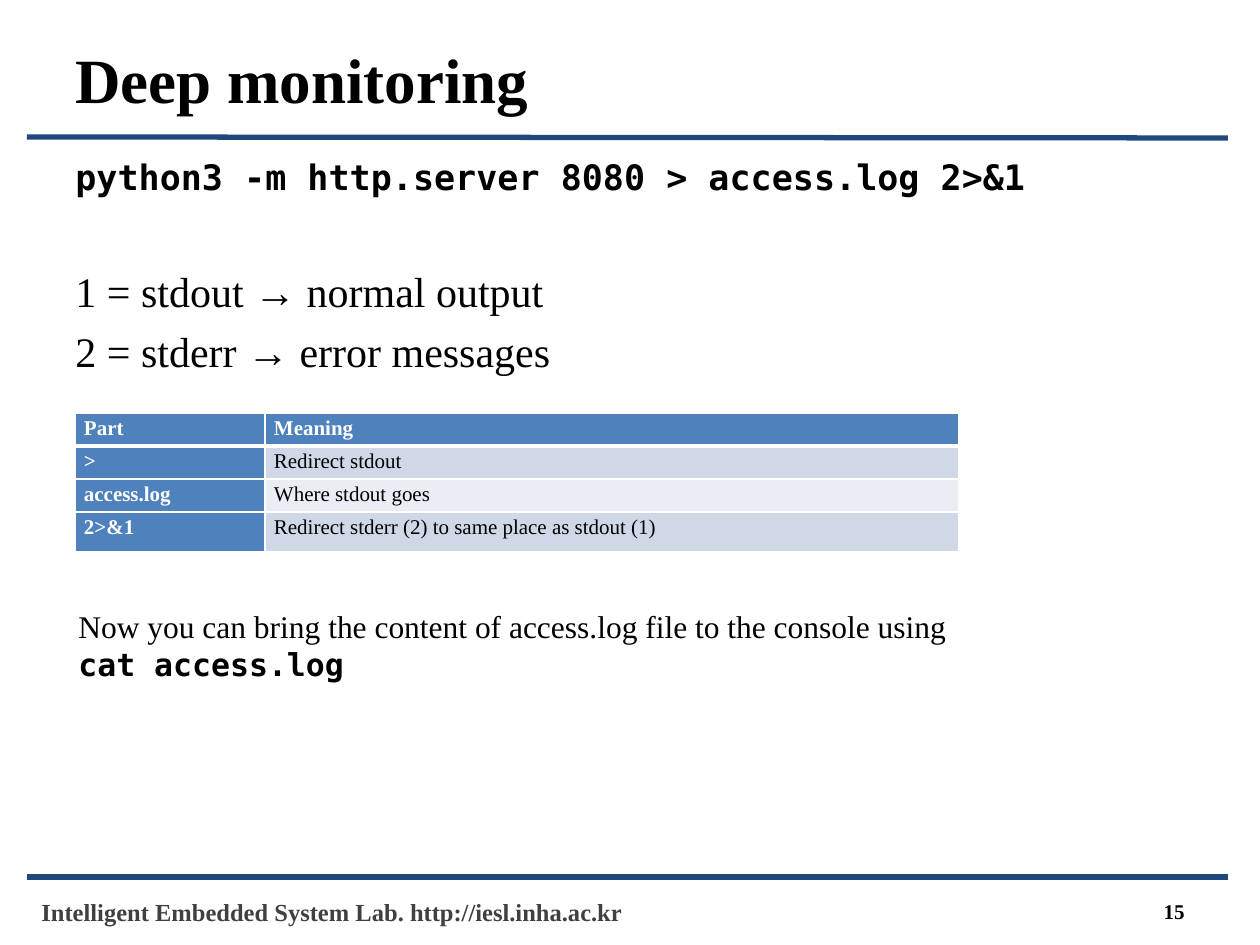
import pptx
import pptx.util
import pptx.dml.color
import pptx.enum.shapes
import pptx.enum.text
import pptx.oxml
import pptx.oxml.ns
from dataclasses import dataclass

PX = 914400 / 126


@dataclass(frozen=True)
class Theme:
    serif: str = "Times New Roman"
    mono: str = "DejaVu Sans Mono"
    black: str = "000000"
    white: str = "FFFFFF"
    grey: str = "404040"
    rule: str = "1F497D"
    head: str = "4F81BD"
    bands: tuple = ("D0D8E8", "E9EDF4")
    title: int = 36
    body: int = 24
    command: int = 20
    note: int = 18
    footer: int = 14
    small: int = 12


T = Theme()
ALIGN = pptx.enum.text.PP_ALIGN
ANCHOR = pptx.enum.text.MSO_ANCHOR


def emu(*lengths):
    """Turn px lengths into EMU."""
    return [pptx.util.Emu(round(n * PX)) for n in lengths]


def write(tf, text, *, size, font=T.serif, color=T.black, bold=False,
          align=ALIGN.LEFT, before=0, after=0, spacing=1.0):
    """Fill the frame's first paragraph, or add one if it already has text."""
    p = tf.add_paragraph() if tf.text else tf.paragraphs[0]
    p.alignment = align
    p.space_before = pptx.util.Pt(before)
    p.space_after = pptx.util.Pt(after)
    p.line_spacing = spacing
    r = p.add_run()
    r.text = text
    r.font.name = font
    r.font.size = pptx.util.Pt(size)
    r.font.bold = bold
    r.font.color.rgb = pptx.dml.color.RGBColor.from_string(color)


prs = pptx.Presentation()
prs.slide_width, prs.slide_height = emu(1260, 945)
s = prs.slides.add_slide(prs.slide_layouts[6])

# Rules under the title and above the footer
for y1, y2 in ((877, 877), (137, 138)):
    line = s.shapes.add_connector(
        pptx.enum.shapes.MSO_CONNECTOR.STRAIGHT, *emu(27, y1, 1228, y2))
    line.line.color.rgb = pptx.dml.color.RGBColor.from_string(T.rule)
    line.line.width = pptx.util.Pt(3)
    line._element.spPr.append(pptx.oxml.parse_xml(
        f'<a:effectLst {pptx.oxml.ns.nsdecls("a")}/>'))

# Text boxes: place, anchor, and paragraphs with their format
boxes = [
    ((29, 891, 630, 43), ANCHOR.TOP, [
        ("Intelligent Embedded System Lab. http://iesl.inha.ac.kr",
         dict(size=T.footer, color=T.grey, bold=True))]),
    ((63, 28, 1134, 100), ANCHOR.MIDDLE, [
        ("Deep monitoring", dict(size=T.title, bold=True))]),
    ((63, 149, 1134, 57), ANCHOR.TOP, [
        ("python3 -m http.server 8080 > access.log 2>&1",
         dict(size=T.command, font=T.mono, bold=True)),
        ("1 = stdout → normal output", dict(size=T.body, before=39)),
        ("2 = stderr → error messages", dict(size=T.body, before=5.5))]),
    ((903, 891, 294, 40), ANCHOR.MIDDLE, [
        ("15", dict(size=T.small, bold=True, align=ALIGN.RIGHT))]),
    ((66, 601, 903, 89), ANCHOR.TOP, [
        ("Now you can bring the content of access.log file to the console using",
         dict(size=T.note)),
        ("cat access.log", dict(size=T.note, font=T.mono, bold=True))]),
]
for place, anchor, paragraphs in boxes:
    tf = s.shapes.add_textbox(*emu(*place)).text_frame
    tf.word_wrap = True
    tf.vertical_anchor = anchor
    for text, style in paragraphs:
        write(tf, text, **style)

# Table of command parts
rows = [
    ("Part", "Meaning"),
    (">", "Redirect stdout"),
    ("access.log", "Where stdout goes"),
    ("2>&1", "Redirect stderr (2) to same place as stdout (1)"),
]
widths = emu(190, 694)
heights = emu(33, 33, 33, 40)
table = s.shapes.add_table(
    len(rows), len(widths), *emu(75, 413), sum(widths), sum(heights)).table
for column, width in zip(table.columns, widths):
    column.width = width
for i, (row, height) in enumerate(zip(rows, heights)):
    table.rows[i].height = height
    for j, text in enumerate(row):
        cell = table.cell(i, j)
        cell.margin_left, cell.margin_right = emu(9, 9)
        cell.margin_top = cell.margin_bottom = 0
        heading = i == 0 or j == 0
        fill = T.head if heading else T.bands[(i - 1) % 2]
        cell.fill.solid()
        cell.fill.fore_color.rgb = pptx.dml.color.RGBColor.from_string(fill)
        write(cell.text_frame, text, size=T.small, bold=heading,
              color=T.white if heading else T.black, after=8, spacing=1.15)
        # Borders come before the fill; the one below the header is thicker
        borders = {"L": 1, "R": 1, "T": 3 if i == 1 else 1, "B": 3 if i == 0 else 1}
        for k, (side, points) in enumerate(borders.items()):
            cell._tc.get_or_add_tcPr().insert(k, pptx.oxml.parse_xml(
                f'<a:ln{side} {pptx.oxml.ns.nsdecls("a")} w="{pptx.util.Pt(points)}">'
                f'<a:solidFill><a:srgbClr val="{T.white}"/></a:solidFill></a:ln{side}>'))

prs.save("out.pptx")
